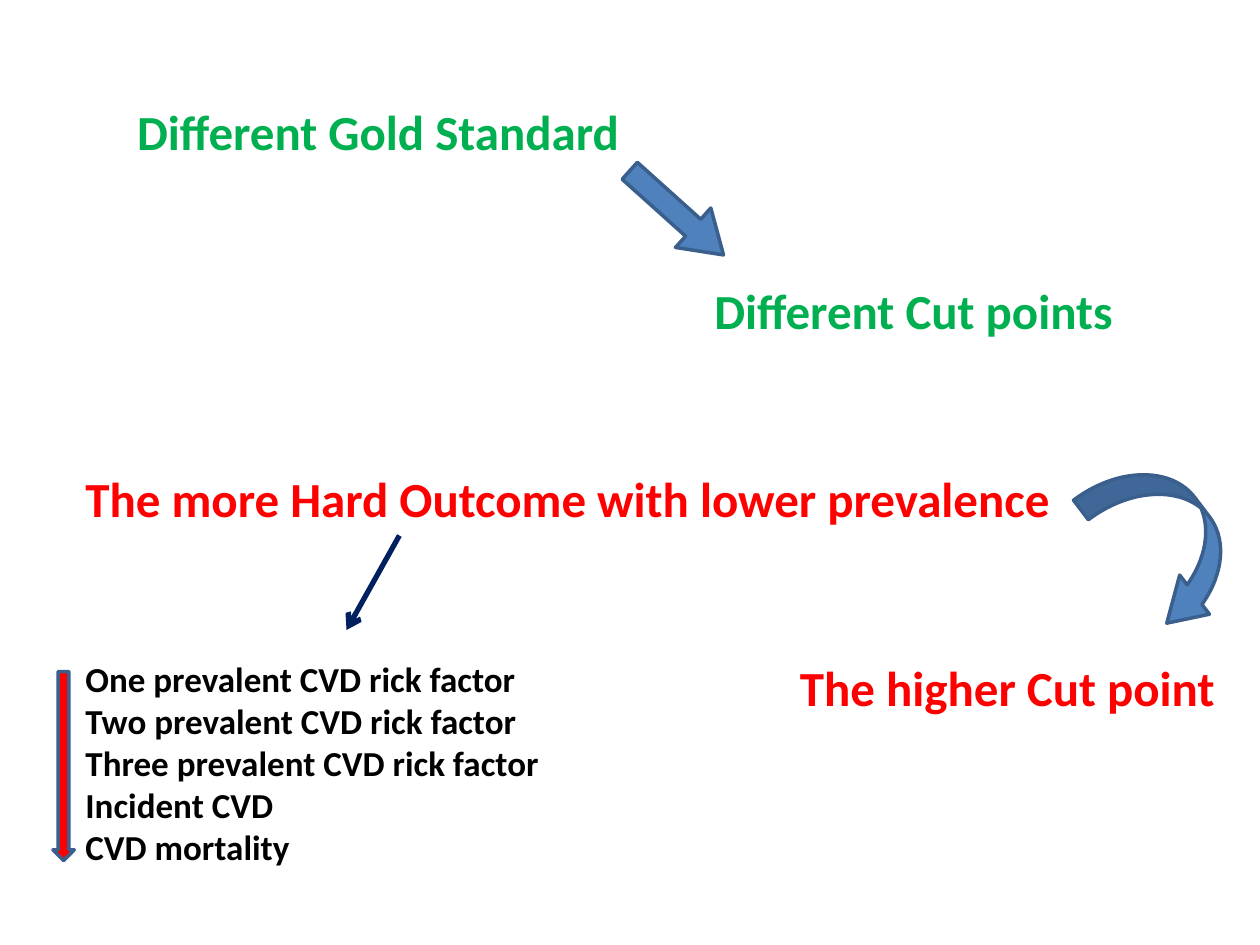
"""Build a slide on how gold standards and outcome hardness shift cut points."""
from lxml import etree
from pptx import Presentation
from pptx.dml.color import RGBColor
from pptx.enum.shapes import MSO_CONNECTOR, MSO_SHAPE
from pptx.enum.text import MSO_ANCHOR, PP_ALIGN
from pptx.oxml.ns import qn
from pptx.util import Inches, Pt

COLORS = {
    "green": "00B050", "red": "FF0000", "black": "000000",
    "blue": "4F81BD", "outline": "3A5F8C", "navy": "002060",
}

CENTERED = {"align": PP_ALIGN.CENTER, "anchor": MSO_ANCHOR.MIDDLE}
OUTCOMES = [
    "One prevalent CVD rick factor",
    "Two prevalent CVD rick factor",
    "Three prevalent CVD rick factor",
    "Incident CVD",
    "CVD mortality",
]
STATEMENTS = [
    (["Different Gold Standard"], (0.5, 0.75, 5, 0.58), {"color": "green", **CENTERED}),
    (["Different Cut points"], (4.75, 2.17, 5, 0.58), {"color": "green", **CENTERED}),
    (["The more Hard Outcome with lower prevalence"], (0.58, 3.67, 8.08, 0.57), {"color": "red"}),
    (["The higher Cut point"], (6.25, 5.17, 4.58, 0.57), {"color": "red"}),
    (OUTCOMES, (0.58, 5.17, 5.33, 1.78), {"color": "black", "size": 20}),
]
BLOCK_ARROWS = [
    (MSO_SHAPE.CURVED_DOWN_ARROW, (8.55, 3.91, 1.42, 0.78), 52.8, (0.25, 0.5, 0.4), "blue"),
    (MSO_SHAPE.RIGHT_ARROW, (4.87, 1.48, 1, 0.42), 41.9, (0.43, 0.77), "blue"),
    (MSO_SHAPE.DOWN_ARROW, (0.42, 5.33, 0.17, 1.5), 0, (0.5, 0.5), "red"),
]
OUTCOME_LINK = (3.17, 4.25, 2.75, 5)


def rgb(name):
    return RGBColor.from_string(COLORS[name])


def add_text(slide, lines, place, color, size=28, align=PP_ALIGN.LEFT, anchor=MSO_ANCHOR.TOP):
    frame = slide.shapes.add_textbox(*map(Inches, place)).text_frame
    frame.word_wrap = True
    frame.vertical_anchor = anchor
    frame.text = "\n".join(lines)
    for paragraph in frame.paragraphs:
        paragraph.alignment = align
        font = paragraph.runs[0].font
        font.name, font.size, font.bold = "Calibri", Pt(size), True
        font.color.rgb = rgb(color)


def add_block_arrow(slide, preset, place, rotation, adjustments, fill):
    arrow = slide.shapes.add_shape(preset, *map(Inches, place))
    arrow.rotation = rotation
    for index, value in enumerate(adjustments):
        arrow.adjustments[index] = value
    arrow.shadow.inherit = False
    arrow.fill.solid()
    arrow.fill.fore_color.rgb = rgb(fill)
    arrow.line.color.rgb = rgb("outline")
    arrow.line.width = Pt(2)


def add_link(slide, ends):
    link = slide.shapes.add_connector(MSO_CONNECTOR.STRAIGHT, *map(Inches, ends))
    link.line.color.rgb = rgb("navy")
    link.line.width = Pt(3)
    etree.SubElement(link.line._get_or_add_ln(), qn("a:tailEnd"), type="arrow")
    etree.SubElement(link._element.spPr, qn("a:effectLst"))


def main():
    deck = Presentation()
    deck.slide_width, deck.slide_height = Inches(10), Inches(7.5)
    slide = deck.slides.add_slide(deck.slide_layouts[6])
    for lines, place, style in STATEMENTS:
        add_text(slide, lines, place, **style)
    for block_arrow in BLOCK_ARROWS:
        add_block_arrow(slide, *block_arrow)
    add_link(slide, OUTCOME_LINK)
    deck.save("out.pptx")


if __name__ == "__main__":
    main()
